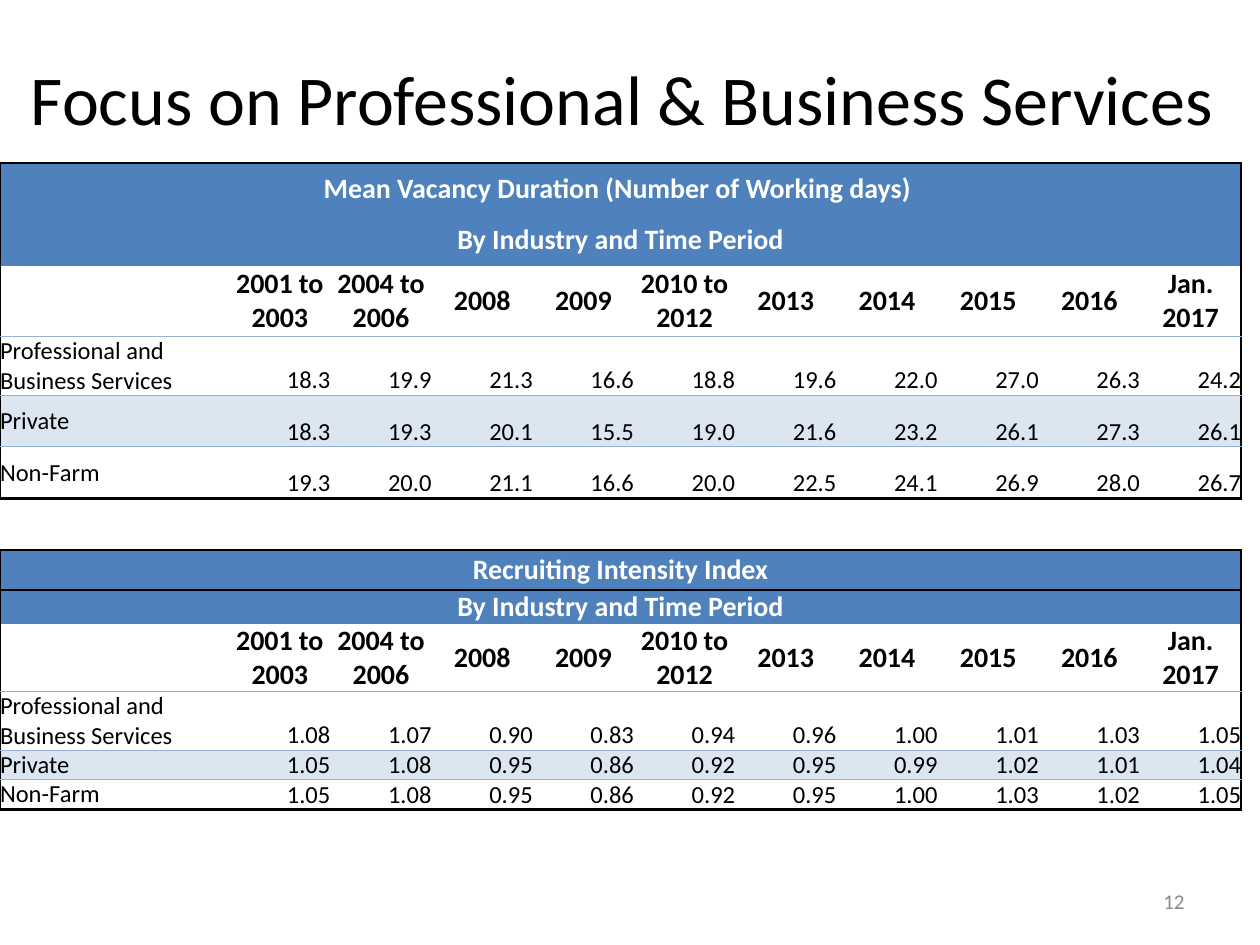
from lxml import etree
from pptx import Presentation
from pptx.dml.color import RGBColor
from pptx.enum.text import MSO_ANCHOR, PP_ALIGN
from pptx.oxml.ns import qn
from pptx.util import Cm, Pt

LEFT, CENTER, RIGHT = PP_ALIGN.LEFT, PP_ALIGN.CENTER, PP_ALIGN.RIGHT
MIDDLE, BOTTOM = MSO_ANCHOR.MIDDLE, MSO_ANCHOR.BOTTOM

BLACK = RGBColor(0x00, 0x00, 0x00)
WHITE = RGBColor(0xFF, 0xFF, 0xFF)
GREY = RGBColor(0x89, 0x89, 0x89)
BLUE = RGBColor(0x4F, 0x81, 0xBD)
PALE_BLUE = RGBColor(0xDC, 0xE6, 0xF1)
RULE_BLUE = RGBColor(0x95, 0xB3, 0xD7)

FONT = "Calibri"
NO_STYLE = "{2D5ABB26-0587-4C30-8999-92F81FD0307C}"
FRAME = (BLACK, 1.5)
RULE = (RULE_BLUE, 0.5)

PERIODS = ["2001 to 2003", "2004 to 2006", "2008", "2009", "2010 to 2012",
           "2013", "2014", "2015", "2016", "Jan. 2017"]
INDUSTRIES = ["Professional and Business Services", "Private", "Non-Farm"]
PERIOD_LINE = "By Industry and Time Period"

DURATION_HEADING = "Mean Vacancy Duration (Number of Working days) "
DURATIONS = [
    [18.3, 19.9, 21.3, 16.6, 18.8, 19.6, 22.0, 27.0, 26.3, 24.2],
    [18.3, 19.3, 20.1, 15.5, 19.0, 21.6, 23.2, 26.1, 27.3, 26.1],
    [19.3, 20.0, 21.1, 16.6, 20.0, 22.5, 24.1, 26.9, 28.0, 26.7],
]
INTENSITY_HEADING = "Recruiting Intensity Index"
INTENSITIES = [
    [1.08, 1.07, 0.90, 0.83, 0.94, 0.96, 1.00, 1.01, 1.03, 1.05],
    [1.05, 1.08, 0.95, 0.86, 0.92, 0.95, 0.99, 1.02, 1.01, 1.04],
    [1.05, 1.08, 0.95, 0.86, 0.92, 0.95, 1.00, 1.03, 1.02, 1.05],
]

LABEL_WIDTH, PERIOD_WIDTH = 4.62, 2.04
ROW_HEIGHTS = [1.04, 1.04, 1.42, 1.04, 1.04, 1.04,   # vacancy duration
               1.04,                                 # gap
               0.81, 0.61, 1.22, 1.14, 0.58, 0.61]   # recruiting intensity
GAP_ROW = 6


def format_text(text_frame, size, color, bold=False, align=LEFT):
    for paragraph in text_frame.paragraphs:
        paragraph.alignment = align
        for run in paragraph.runs:
            run.font.name = FONT
            run.font.size = Pt(size)
            run.font.bold = bold
            run.font.color.rgb = color


def set_borders(cell, **borders):
    """Draw the given sides (L, R, T, B), each a (color, points) pair."""
    properties = cell._tc.get_or_add_tcPr()
    for side in "LRTB":
        if side in borders:
            color, width = borders[side]
            line = etree.SubElement(properties, qn("a:ln" + side), w=str(Pt(width)))
            fill = etree.SubElement(line, qn("a:solidFill"))
            etree.SubElement(fill, qn("a:srgbClr"), val=str(color))


def fill_row(table, row, texts, size, color=BLACK, bold=False,
             aligns=(CENTER, CENTER), anchor=MIDDLE, fill=None,
             top=None, bottom=None, framed=True):
    """Write one table row; aligns holds the label's and the values' alignment."""
    last = len(table.columns) - 1
    for column, text in enumerate(texts):
        cell = table.cell(row, column)
        borders = {"T": top, "B": bottom}
        if framed:
            borders["L"] = FRAME if column == 0 else None
            borders["R"] = FRAME if column == last or cell.is_merge_origin else None
        set_borders(cell, **{side: line for side, line in borders.items() if line})
        if fill is None:
            cell.fill.background()
        else:
            cell.fill.solid()
            cell.fill.fore_color.rgb = fill
        cell.margin_left = cell.margin_right = 0
        cell.margin_top = cell.margin_bottom = 0
        cell.vertical_anchor = anchor if column else MIDDLE
        if text:
            cell.text_frame.text = text
            format_text(cell.text_frame, size, color, bold, aligns[min(column, 1)])


def fill_section(table, first_row, heading, values, number_format):
    last = len(table.columns) - 1
    blanks = [""] * last

    # Heading band
    for offset, text in enumerate([heading, PERIOD_LINE]):
        row = first_row + offset
        table.cell(row, 0).merge(table.cell(row, last))
        fill_row(table, row, [text] + blanks, 16, WHITE, True, fill=BLUE,
                 top=None if offset else FRAME)

    # Time periods
    fill_row(table, first_row + 2, [""] + PERIODS, 16, bold=True, bottom=RULE)

    # One row for each industry
    for index, (industry, numbers) in enumerate(zip(INDUSTRIES, values)):
        texts = [industry] + [format(number, number_format) for number in numbers]
        fill_row(table, first_row + 3 + index, texts, 14,
                 aligns=(LEFT, RIGHT), anchor=BOTTOM,
                 fill=PALE_BLUE if index % 2 else None, top=RULE,
                 bottom=FRAME if index == len(values) - 1 else RULE)


def add_industry_table(slide, left, top):
    widths = [LABEL_WIDTH] + [PERIOD_WIDTH] * len(PERIODS)
    shape = slide.shapes.add_table(len(ROW_HEIGHTS), len(widths), Cm(left), Cm(top),
                                   Cm(sum(widths)), Cm(sum(ROW_HEIGHTS)))
    table = shape.table
    table.first_row = table.horz_banding = False
    table._tbl.tblPr.find(qn("a:tableStyleId")).text = NO_STYLE
    for column, width in zip(table.columns, widths):
        column.width = Cm(width)
    for row, height in zip(table.rows, ROW_HEIGHTS):
        row.height = Cm(height)

    fill_section(table, 0, DURATION_HEADING, DURATIONS, ".1f")
    fill_row(table, GAP_ROW, [""] * len(widths), 14, top=FRAME, bottom=FRAME,
             framed=False)
    fill_section(table, GAP_ROW + 1, INTENSITY_HEADING, INTENSITIES, ".2f")


def place_title(slide, left, top, width, height):
    title = slide.shapes.title
    title.left, title.top = Cm(left), Cm(top)
    title.width, title.height = Cm(width), Cm(height)
    title.text_frame.text = "Focus on Professional & Business Services "
    title.text_frame.vertical_anchor = MIDDLE
    format_text(title.text_frame, 40, BLACK, align=CENTER)


def add_page_number(slide, left, top, width, height):
    box = slide.shapes.add_textbox(Cm(left), Cm(top), Cm(width), Cm(height))
    box.text_frame.word_wrap = True
    box.text_frame.vertical_anchor = MIDDLE
    box.text_frame.text = "12"
    format_text(box.text_frame, 12, GREY, align=RIGHT)


def main():
    presentation = Presentation()
    presentation.slide_width, presentation.slide_height = Cm(25.4), Cm(19.05)
    title_only = presentation.slide_layouts[5]
    slide = presentation.slides.add_slide(title_only)
    place_title(slide, 0, 1.02, 25.4, 1.9)
    add_page_number(slide, 18.2, 17.66, 5.93, 1.01)
    add_industry_table(slide, 0, 3.28)
    presentation.save("out.pptx")


if __name__ == "__main__":
    main()
